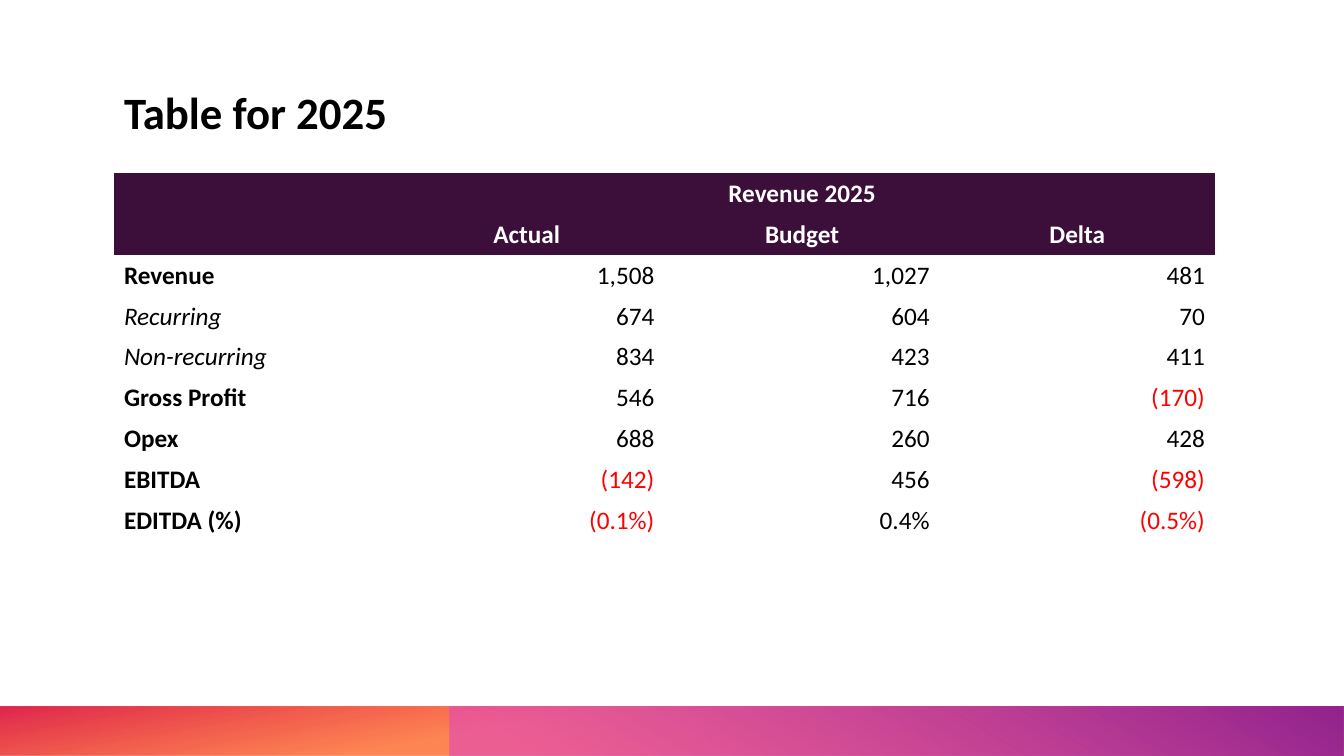
from dataclasses import dataclass

from lxml.etree import SubElement
from pptx import Presentation
from pptx.dml.color import RGBColor
from pptx.enum.shapes import MSO_SHAPE as Shape
from pptx.enum.text import MSO_ANCHOR as Anchor, MSO_AUTO_SIZE as AutoSize, PP_ALIGN as Align
from pptx.oxml.ns import qn
from pptx.util import Inches, Pt


@dataclass(frozen=True)
class Theme:
    font: str = "Calibri"
    title_size: int = 32
    table_size: int = 18
    text: str = "000000"
    negative: str = "FF0000"
    light: str = "FFFFFF"
    header: str = "3C0F3A"
    orange: str = "FE4A00"
    red: str = "DA002F"
    pink: str = "E349BB"
    purple: str = "92248E"


THEME = Theme()

# Slide and table grid, in inches
WIDTH, HEIGHT = 13.33, 7.5
LEFT, TABLE_TOP = 1.13, 1.72
COLUMN, ROW = 2.73, 3.65 / 9
BAND_HEIGHT = 0.49
BAND_SPLIT = 4.46

HEADINGS = ["Actual", "Budget", "Delta"]
# Label, label format, values under the headings
LINES = [
    ("Revenue", "bold", ["1,508", "1,027", "481"]),
    ("Recurring", "italic", ["674", "604", "70"]),
    ("Non-recurring", "italic", ["834", "423", "411"]),
    ("Gross Profit", "bold", ["546", "716", "(170)"]),
    ("Opex", "bold", ["688", "260", "428"]),
    ("EBITDA", "bold", ["(142)", "456", "(598)"]),
    ("EDITDA (%)", "bold", ["(0.1%)", "0.4%", "(0.5%)"]),
]


def write_text(frame, text, size=THEME.table_size, color=THEME.text, bold=False,
               italic=False, align=Align.LEFT, line_spacing=None):
    paragraph = frame.paragraphs[0]
    paragraph.alignment = align
    paragraph.line_spacing = line_spacing
    run = paragraph.add_run()
    run.text = text
    font = run.font
    font.name, font.size, font.bold, font.italic = THEME.font, Pt(size), bold, italic
    font.color.rgb = RGBColor.from_string(color)


def add_band(slide, left, stops, angle):
    """Footer band to the right edge; stops are (position, colour, opacity %)."""
    shape = slide.shapes.add_shape(
        Shape.RECTANGLE, Inches(left), Inches(HEIGHT - BAND_HEIGHT),
        Inches(WIDTH - left), Inches(BAND_HEIGHT))
    shape.shadow.inherit = False
    shape.line.fill.background()
    shape.fill.gradient()
    shape.fill.gradient_angle = angle
    for stop, (position, color, _) in zip(shape.fill.gradient_stops, stops):
        stop.position = position
        stop.color.rgb = RGBColor.from_string(color)
    # Opacity of each stop
    for color_element, (_, _, opacity) in zip(shape.element.iter(qn("a:srgbClr")), stops):
        SubElement(color_element, qn("a:alpha"), val=str(opacity * 1000))


def add_title(slide, text):
    title = slide.shapes.title
    title.left, title.top = Inches(LEFT), Inches(0.38)
    title.width, title.height = Inches(4 * COLUMN), Inches(1.05)
    frame = title.text_frame
    frame.vertical_anchor = Anchor.BOTTOM
    frame.auto_size = AutoSize.NONE
    frame.word_wrap = True
    write_text(frame, text, size=THEME.title_size, bold=True, line_spacing=0.9)


def set_borders(cell, sides):
    properties = cell._tc.get_or_add_tcPr()
    for side in sides:
        line = SubElement(properties, qn(f"a:ln{side}"), w=str(Pt(1)))
        fill = SubElement(line, qn("a:solidFill"))
        SubElement(fill, qn("a:srgbClr"), val=THEME.light)


def add_revenue_table(slide):
    rows, columns = len(LINES) + 2, len(HEADINGS) + 1
    frame = slide.shapes.add_table(rows, columns, Inches(LEFT), Inches(TABLE_TOP),
                                   Inches(columns * COLUMN), Inches(rows * ROW))
    table = frame.table
    # Plain style without banding or grid
    table.first_row = table.horz_banding = False
    style = table._tbl.tblPr.find(qn("a:tableStyleId"))
    style.text = "{2D5ABB26-0587-4C30-8999-92F81FD0307C}"

    # Two header rows
    for row in range(2):
        for column in range(columns):
            fill = table.cell(row, column).fill
            fill.solid()
            fill.fore_color.rgb = RGBColor.from_string(THEME.header)
    table.cell(0, 1).merge(table.cell(0, columns - 1))
    headers = [(0, 1, "Revenue 2025")]
    headers += [(1, column, text) for column, text in enumerate(HEADINGS, 1)]
    for row, column, text in headers:
        write_text(table.cell(row, column).text_frame, text, color=THEME.light,
                   bold=True, align=Align.CENTER)

    # Body rows, negatives in red
    for row, (label, emphasis, values) in enumerate(LINES, 2):
        for column in range(columns):
            cell = table.cell(row, column)
            set_borders(cell, "LRB" if row == 2 else "LRTB")
            cell.fill.background()
        write_text(table.cell(row, 0).text_frame, label, **{emphasis: True})
        for column, value in enumerate(values, 1):
            color = THEME.negative if value.startswith("(") else THEME.text
            write_text(table.cell(row, column).text_frame, value, color=color,
                       align=Align.RIGHT)


def main():
    presentation = Presentation()
    presentation.slide_width, presentation.slide_height = Inches(WIDTH), Inches(HEIGHT)
    title_only = presentation.slide_layouts[5]
    slide = presentation.slides.add_slide(title_only)
    slide.background.fill.solid()
    slide.background.fill.fore_color.rgb = RGBColor.from_string(THEME.light)

    add_band(slide, 0, [(0.62, THEME.orange, 67), (1, THEME.red, 85)], angle=100)
    add_band(slide, BAND_SPLIT, [(0.09, THEME.pink, 62), (0.99, THEME.purple, 100)], angle=60)
    add_title(slide, "Table for 2025")
    add_revenue_table(slide)
    presentation.save("out.pptx")


if __name__ == "__main__":
    main()
